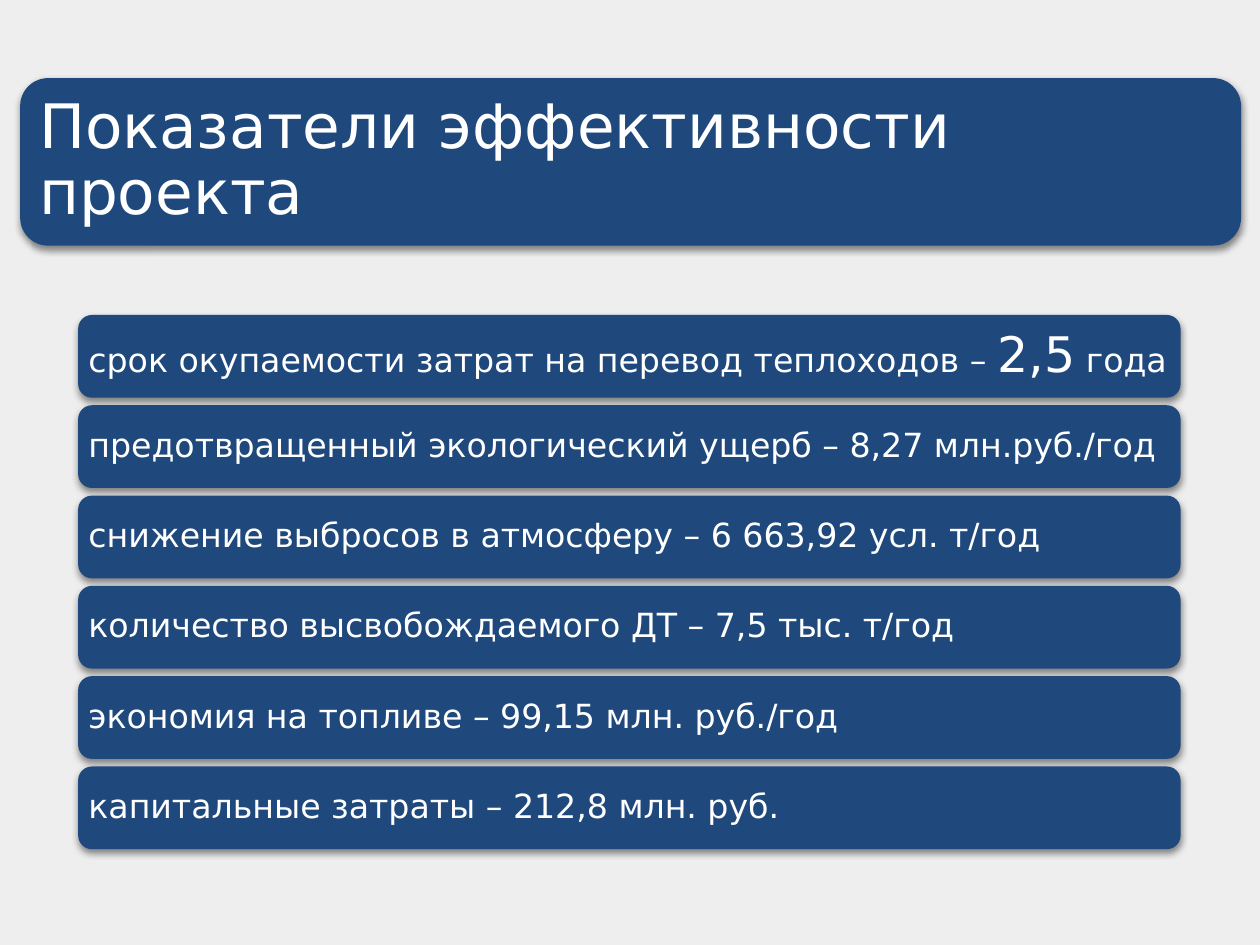
from lxml import etree
from pptx import Presentation
from pptx.dml.color import RGBColor
from pptx.enum.shapes import MSO_SHAPE
from pptx.enum.text import MSO_ANCHOR, MSO_AUTO_SIZE, PP_ALIGN
from pptx.oxml import parse_xml
from pptx.util import Inches, Pt

ROUNDED = MSO_SHAPE.ROUNDED_RECTANGLE
MIDDLE = MSO_ANCHOR.MIDDLE
NO_AUTOFIT = MSO_AUTO_SIZE.NONE
LEFT = PP_ALIGN.LEFT
TITLE_ONLY = 5
FONT = "DejaVu Sans"
NAVY, WHITE, PALE = "1F497D", "FFFFFF", "EEEEEE"
DRAWING = "http://schemas.openxmlformats.org/drawingml/2006/main"
SHADOW = (
    f'<a:outerShdw xmlns:a="{DRAWING}" blurRad="{Pt(4)}" dist="{Pt(2)}" '
    'dir="5400000" algn="ctr" rotWithShape="0"><a:srgbClr val="000000">'
    '<a:alpha val="45000"/></a:srgbClr></a:outerShdw>'
)

TITLE = "Показатели эффективности проекта"
BODY_SIZE, KEY_SIZE = 19, 28
INDICATORS = [
    [("срок окупаемости затрат на перевод теплоходов – ", BODY_SIZE),
     ("2,5", KEY_SIZE), (" года", BODY_SIZE)],
    [("предотвращенный экологический ущерб – 8,27 млн.руб./год", BODY_SIZE)],
    [("снижение выбросов в атмосферу – 6 663,92 усл. т/год", BODY_SIZE)],
    [("количество высвобождаемого ДТ – 7,5 тыс. т/год", BODY_SIZE)],
    [("экономия на топливе – 99,15 млн. руб./год", BODY_SIZE)],
    [("капитальные затраты – 212,8 млн. руб.", BODY_SIZE)],
]


def color(hex_value):
    return RGBColor.from_string(hex_value)


def add_bar(page, left, top, width, height):
    """Add a navy rounded bar with a soft shadow below it."""
    bar = page.shapes.add_shape(ROUNDED, left, top, width, height)
    bar.fill.solid()
    bar.fill.fore_color.rgb = color(NAVY)
    bar.line.fill.background()
    bar.shadow.inherit = False
    effects = bar._element.spPr.find(etree.QName(DRAWING, "effectLst").text)
    effects.append(parse_xml(SHADOW))
    return bar


def write_text(box, parts, margin):
    """Write one left-aligned paragraph from (text, size) parts."""
    frame = box.text_frame
    frame.word_wrap = True
    frame.auto_size = NO_AUTOFIT
    frame.vertical_anchor = MIDDLE
    frame.margin_left = frame.margin_right = margin
    frame.margin_top = frame.margin_bottom = margin
    para = frame.paragraphs[0]
    para.alignment = LEFT
    para.line_spacing = 0.9
    for text, size in parts:
        span = para.add_run()
        span.text = text
        span.font.name = FONT
        span.font.size = Pt(size)
        span.font.color.rgb = color(WHITE)


def place_title(page, left, top, width, height):
    bar = add_bar(page, left, top, width, height)
    title = page.shapes.title
    title.left, title.top, title.width, title.height = left, top, width, height
    write_text(title, [(TITLE, 35)], Inches(0.15))
    bar._element.addnext(title._element)  # keep the title above its bar


def place_indicators(page, left, top, width, height):
    gap = Inches(0.06)
    count = len(INDICATORS)
    bar_height = (height - gap * (count - 1)) // count
    for row, parts in enumerate(INDICATORS):
        bar_top = top + row * (bar_height + gap)
        bar = add_bar(page, left, bar_top, width, bar_height)
        write_text(bar, parts, Inches(0.05))


def main():
    deck = Presentation()
    deck.slide_width, deck.slide_height = Inches(10), Inches(7.5)
    page = deck.slides.add_slide(deck.slide_layouts[TITLE_ONLY])
    page.background.fill.solid()
    page.background.fill.fore_color.rgb = color(PALE)
    place_title(page, Inches(0.16), Inches(0.62), Inches(9.69), Inches(1.33))
    place_indicators(page, Inches(0.62), Inches(2.5), Inches(8.75), Inches(4.24))
    deck.save("out.pptx")


if __name__ == "__main__":
    main()
